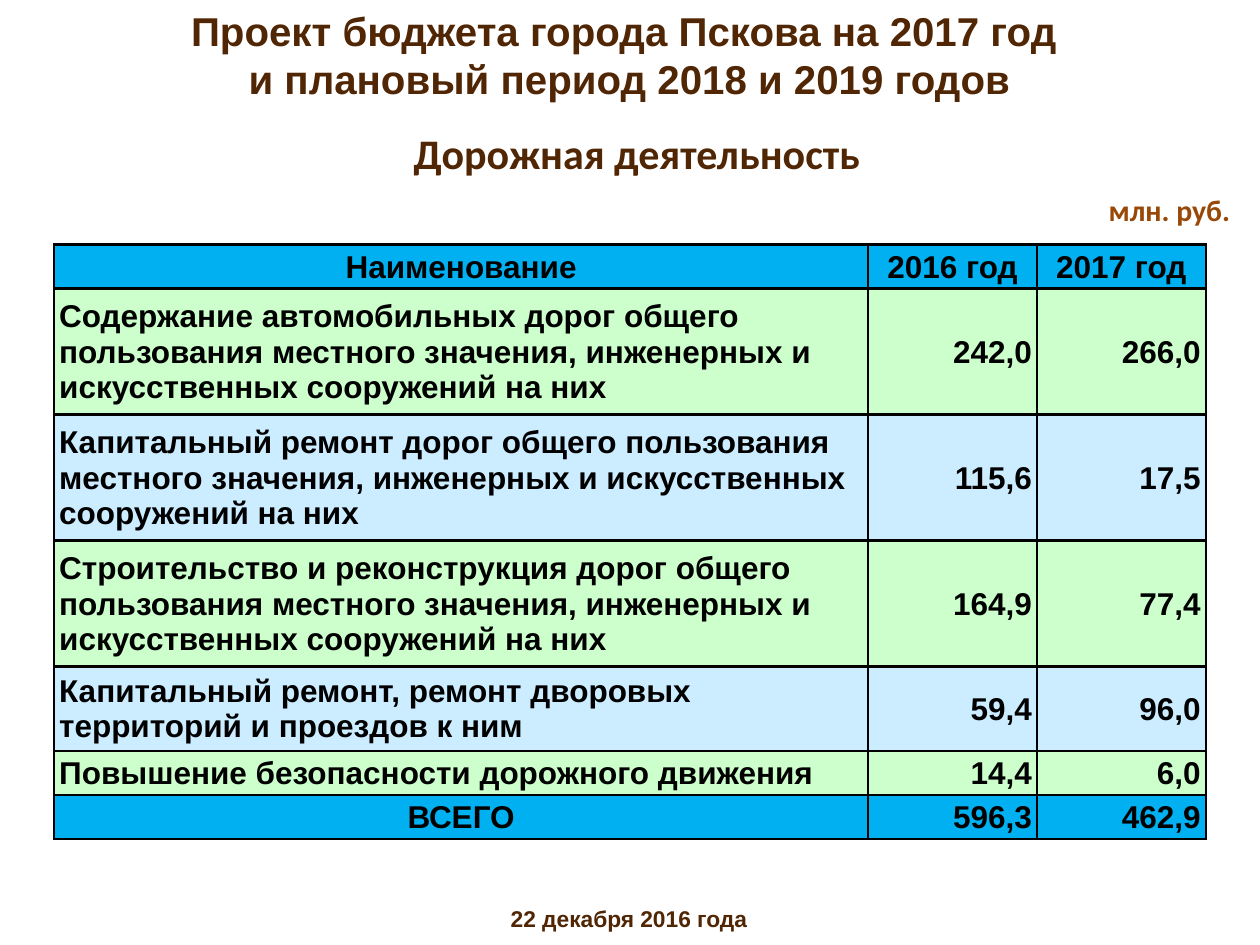
from dataclasses import dataclass

from lxml import etree
from pptx import Presentation
from pptx.dml.color import RGBColor
from pptx.enum.text import MSO_ANCHOR, MSO_AUTO_SIZE, PP_ALIGN
from pptx.oxml.ns import qn
from pptx.util import Inches, Pt

LEFT, CENTER, RIGHT = PP_ALIGN.LEFT, PP_ALIGN.CENTER, PP_ALIGN.RIGHT
TOP, MIDDLE = MSO_ANCHOR.TOP, MSO_ANCHOR.MIDDLE
NO_FIT = MSO_AUTO_SIZE.NONE
TITLE_ONLY = 5


@dataclass(frozen=True)
class Style:
    font: str
    size: int
    color: str


@dataclass(frozen=True)
class Theme:
    title: Style = Style("Arial", 23, "502604")
    subtitle: Style = Style("Calibri", 24, "502604")
    unit: Style = Style("Calibri", 17, "984807")
    date: Style = Style("Arial", 13, "502604")
    cell: Style = Style("Arial", 18, "000000")
    accent: str = "00B0F0"
    bands: tuple = ("CCFFCC", "CCECFF")
    border: str = "000000"
    border_pt: float = 1.5


THEME = Theme()
COLUMNS = (6.46, 1.34, 1.34)
LINE = 0.33  # row height for each line of cell text
ROWS = [  # lines of text, then the cells
    (1, "Наименование", "2016 год", "2017 год"),
    (3, "Содержание автомобильных дорог общего пользования местного значения, "
        "инженерных и искусственных сооружений на них", "242,0", "266,0"),
    (3, "Капитальный ремонт дорог общего пользования местного значения, "
        "инженерных и искусственных сооружений на них", "115,6", "17,5"),
    (3, "Строительство и реконструкция дорог общего пользования местного значения, "
        "инженерных и искусственных сооружений на них", "164,9", "77,4"),
    (2, "Капитальный ремонт, ремонт дворовых территорий и проездов к ним",
        "59,4", "96,0"),
    (1, "Повышение безопасности дорожного движения", "14,4", "6,0"),
    (1, "ВСЕГО", "596,3", "462,9"),
]


def write(tf, lines, style, align):
    """Write lines into the first paragraph, one run each."""
    p = tf.paragraphs[0]
    p.alignment = align
    for i, line in enumerate(lines):
        if i:
            p.add_line_break()
        r = p.add_run()
        r.text = line
        r.font.name = style.font
        r.font.size = Pt(style.size)
        r.font.bold = True
        r.font.color.rgb = RGBColor.from_string(style.color)


def add_title(s, lines, box):
    title = s.shapes.title
    title.left, title.top, title.width, title.height = map(Inches, box)
    tf = title.text_frame
    tf.auto_size = NO_FIT
    tf.vertical_anchor = TOP
    write(tf, lines, THEME.title, CENTER)


def add_label(s, text, box, style, align=CENTER, wrap=True):
    tf = s.shapes.add_textbox(*map(Inches, box)).text_frame
    tf.word_wrap = wrap
    write(tf, [text], style, align)


def set_borders(cell):
    tc_pr = cell._tc.get_or_add_tcPr()
    for i, side in enumerate(("lnL", "lnR", "lnT", "lnB")):
        ln = etree.Element(qn(f"a:{side}"), w=str(Pt(THEME.border_pt)))
        fill = etree.SubElement(ln, qn("a:solidFill"))
        etree.SubElement(fill, qn("a:srgbClr"), val=THEME.border)
        tc_pr.insert(i, ln)  # borders come before the fill


def format_cell(cell, text, fill, align):
    cell.fill.solid()
    cell.fill.fore_color.rgb = RGBColor.from_string(fill)
    cell.vertical_anchor = MIDDLE
    cell.margin_left = cell.margin_right = Inches(0.04)
    cell.margin_top, cell.margin_bottom = Inches(0.01), 0
    write(cell.text_frame, [text], THEME.cell, align)
    set_borders(cell)


def add_budget_table(s, left, top):
    heights = [max(0.35, LINE * lines + 0.01) for lines, *_ in ROWS]
    table = s.shapes.add_table(
        len(ROWS), len(COLUMNS), Inches(left), Inches(top),
        Inches(sum(COLUMNS)), Inches(sum(heights))).table
    for column, width in zip(table.columns, COLUMNS):
        column.width = Inches(width)
    last = len(ROWS) - 1
    for i, (_, *texts) in enumerate(ROWS):
        table.rows[i].height = Inches(heights[i])
        is_edge = i in (0, last)
        fill = THEME.accent if is_edge else THEME.bands[(i - 1) % 2]
        for j, text in enumerate(texts):
            if i == 0 or (is_edge and j == 0):
                align = CENTER
            else:
                align = RIGHT if j else LEFT
            format_cell(table.cell(i, j), text, fill, align)


def main():
    prs = Presentation()
    prs.slide_width, prs.slide_height = Inches(10), Inches(7.5)
    s = prs.slides.add_slide(prs.slide_layouts[TITLE_ONLY])

    # Headings
    add_title(s, ["Проект бюджета города Пскова на 2017 год ",
                  "и плановый период 2018 и 2019 годов"], (0, 0, 10, 0.91))
    add_label(s, "Дорожная деятельность", (0.35, 0.96, 9.41, 0.51), THEME.subtitle)
    add_label(s, "млн. руб.", (8.7, 1.47, 1.17, 0.39), THEME.unit, LEFT, wrap=False)

    # Road spending by year
    add_budget_table(s, 0.43, 1.94)

    # Date
    add_label(s, "22 декабря 2016 года", (-0.01, 7.13, 10, 0.32), THEME.date)
    prs.save("out.pptx")


if __name__ == "__main__":
    main()
